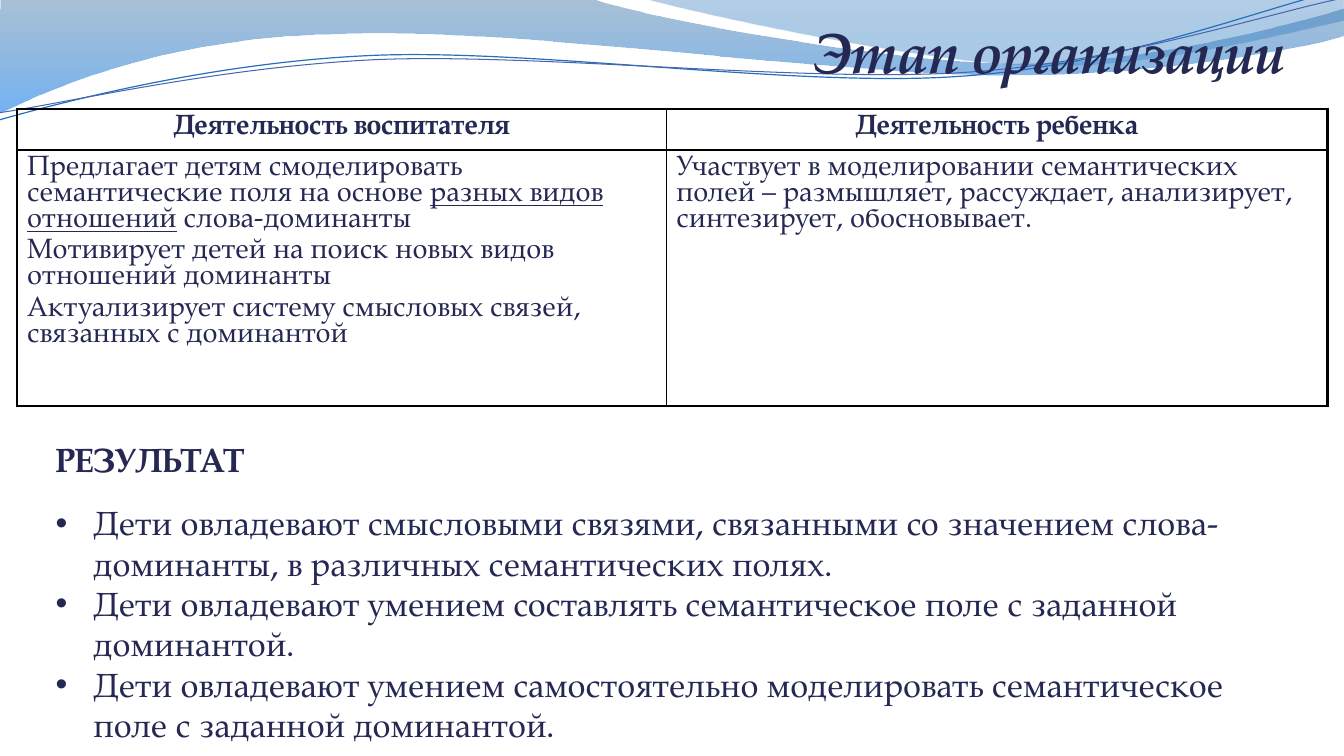
from dataclasses import dataclass

from lxml.etree import SubElement
from pptx import Presentation
from pptx.dml.color import RGBColor
from pptx.enum.text import MSO_ANCHOR, PP_ALIGN
from pptx.oxml import parse_xml
from pptx.oxml.ns import nsdecls, qn
from pptx.util import Pt


@dataclass(frozen=True)
class Theme:
    font: str = "TeX Gyre Pagella"
    ink: str = "242852"
    border: str = "000000"
    title_size: int = 40
    table_size: int = 20
    result_size: int = 24
    thick: float = 2.25
    thin: float = 1


@dataclass(frozen=True)
class Box:
    left: float
    top: float
    width: float
    height: float

    def lengths(self):
        return Pt(self.left), Pt(self.top), Pt(self.width), Pt(self.height)


THEME = Theme()
STRAND_ROTATION = 357.3
HEADING_HEIGHT = 26.6
FIRST_COLUMN_WIDTH = 463.7

BANDS = [
    ([(0, 0), (422.6, -0.7), (456.5, 12.2, 636.5, 45.4, 727.9, 45.4),
      (818.6, 45.4, 919.4, 18.7, 959.8, 6.5), (960.5, 25.9),
      (944, 31.7, 834.5, 54.7, 715.7, 54), (596.9, 54, 366.5, 20.2, 247, 24.5),
      (123.8, 25.9, 43.9, 59.8, -1.4, 81.4)],
     [(0, "4075A3", 45), (1, "0073E7", 55)]),
    ([(459.4, -0.7), (488.9, 7.9, 654.5, 44.6, 738, 46.8),
      (820.8, 49.7, 923, 23, 959.8, 15.1), (959.8, 0)],
     [(0, "0B5EB1", 30), (0.8, "438CCC", 45)]),
]
STRANDS = [
    ([(-2.3, 63.1), (44.4, 52.3, 151.4, 29.2, 266, 29.6),
      (379.8, 29.9, 567, 66.8, 682.5, 64.3),
      (798.5, 62.6, 901.9, 25.7, 959.4, 15.5)], "2470BC", 0.85),
    ([(-2, 57.9), (43.6, 53.7, 157.2, 32.3, 271.6, 32.7),
      (386.9, 33.8, 572.2, 63.4, 687, 61.6),
      (801.6, 59.8, 904.6, 30, 961.4, 21.2)], "4A66AC", 0.75),
]

HEADINGS = ["Деятельность воспитателя", "Деятельность ребенка"]
ACTIVITIES = [
    ["Предлагает детям смоделировать семантические поля на основе "
     "_разных видов отношений_ слова-доминанты",
     "Мотивирует детей на поиск новых видов отношений доминанты",
     "Актуализирует систему смысловых связей, связанных с доминантой"],
    ["Участвует в моделировании семантических полей – размышляет, "
     "рассуждает, анализирует, синтезирует, обосновывает."],
]
RESULTS = [
    "Дети овладевают смысловыми связями, связанными со значением "
    "слова-доминанты, в различных семантических полях.",
    "Дети овладевают умением составлять семантическое поле с заданной доминантой.",
    "Дети овладевают умением самостоятельно моделировать семантическое "
    "поле с заданной доминантой.",
]


def style_runs(para, size, bold=False, italic=False):
    for span in para.runs:
        span.font.name = THEME.font
        span.font.size = Pt(size)
        span.font.bold = bold
        span.font.italic = italic
        span.font.color.rgb = RGBColor.from_string(THEME.ink)


def next_paragraph(frame, index):
    return frame.add_paragraph() if index else frame.paragraphs[0]


def draw_outline(page, box, outline, closed):
    points = [(Pt(box.left + step[-2]), Pt(box.top + step[-1])) for step in outline]
    builder = page.shapes.build_freeform(*points[0])
    builder.add_line_segments(points[1:], close=closed)
    shape = builder.convert_to_shape()
    shape.shadow.inherit = False
    segments = list(shape.element.spPr.iter(qn("a:lnTo")))
    for segment, step in zip(segments, outline[1:]):
        if len(step) == 2:
            continue
        segment.tag = qn("a:cubicBezTo")
        segment.clear()
        for x, y in zip(step[::2], step[1::2]):
            point = SubElement(segment, qn("a:pt"))
            point.set("x", str(Pt(box.left + x) - shape.left))
            point.set("y", str(Pt(box.top + y) - shape.top))
    return shape


def add_waves(page, box):
    for outline, stops in BANDS:
        band = draw_outline(page, box, outline, True)
        band.line.fill.background()
        band.fill.gradient()
        band.fill.gradient_angle = 270
        for stop, (position, color, _) in zip(band.fill.gradient_stops, stops):
            stop.position = position
            stop.color.rgb = RGBColor.from_string(color)
        colors = band.element.spPr.iter(qn("a:srgbClr"))
        for node, (_, _, opacity) in zip(colors, stops):
            SubElement(node, qn("a:alpha")).set("val", str(opacity * 1000))
    for outline, color, width in STRANDS:
        strand = draw_outline(page, box, outline, False)
        strand.rotation = STRAND_ROTATION
        strand.fill.background()
        strand.line.color.rgb = RGBColor.from_string(color)
        strand.line.width = Pt(width)


def add_title(page, box):
    frame = page.shapes.add_textbox(*box.lengths()).text_frame
    frame.word_wrap = True
    frame.vertical_anchor = MSO_ANCHOR.BOTTOM
    frame.margin_left = frame.margin_right = frame.margin_bottom = 0
    para = frame.paragraphs[0]
    para.text = "Этап организации "
    para.alignment = PP_ALIGN.RIGHT
    style_runs(para, THEME.title_size, bold=True, italic=True)


def set_borders(cell, widths):
    properties = cell._tc.get_or_add_tcPr()
    for index, (side, width) in enumerate(widths.items()):
        properties.insert(index, parse_xml(
            f'<a:ln{side} {nsdecls("a")} w="{Pt(width)}"><a:solidFill>'
            f'<a:srgbClr val="{THEME.border}"/></a:solidFill></a:ln{side}>'))


def fill_cell(cell, texts, heading):
    frame = cell.text_frame
    for index, text in enumerate(texts):
        para = next_paragraph(frame, index)
        para.line_spacing = 0.92
        para.space_before = Pt(4 if index else 0)
        para.alignment = PP_ALIGN.CENTER if heading else PP_ALIGN.LEFT
        for part, words in enumerate(text.split("_")):
            span = para.add_run()
            span.text = words
            span.font.underline = part % 2 == 1
        style_runs(para, THEME.table_size, bold=heading)


def add_activity_table(page, box):
    table = page.shapes.add_table(2, 2, *box.lengths()).table
    table.first_row = table.horz_banding = False
    widths = FIRST_COLUMN_WIDTH, box.width - FIRST_COLUMN_WIDTH
    for column, width in zip(table.columns, widths):
        column.width = Pt(width)
    heights = HEADING_HEIGHT, box.height - HEADING_HEIGHT
    for row, height in zip(table.rows, heights):
        row.height = Pt(height)
    rows = [[[heading] for heading in HEADINGS], ACTIVITIES]
    for row, contents in enumerate(rows):
        for column, texts in enumerate(contents):
            cell = table.cell(row, column)
            cell.fill.background()
            fill_cell(cell, texts, heading=row == 0)
            outer = {"L": column == 0, "R": column == 1, "T": row == 0, "B": row == 1}
            set_borders(cell, {side: THEME.thick if edge else THEME.thin
                               for side, edge in outer.items()})


def add_results(page, box):
    frame = page.shapes.add_textbox(*box.lengths()).text_frame
    frame.word_wrap = True
    for index, text in enumerate(["РЕЗУЛЬТАТ"] + RESULTS):
        para = next_paragraph(frame, index)
        para.text = text
        style_runs(para, THEME.result_size, bold=index == 0)
        if index == 0:
            para.space_after = Pt(16.5)
            continue
        properties = para._p.get_or_add_pPr()
        properties.set("marL", str(Pt(27)))
        properties.set("indent", str(Pt(-27)))
        SubElement(properties, qn("a:buFont")).set("typeface", "Arial")
        SubElement(properties, qn("a:buChar")).set("char", "•")


def main():
    deck = Presentation()
    deck.slide_width, deck.slide_height = Pt(960), Pt(540)
    page = deck.slides.add_slide(deck.slide_layouts[6])
    add_waves(page, Box(0, 0, 960, 86))
    add_title(page, Box(227.5, 23.8, 700, 36.7))
    add_activity_table(page, Box(12.2, 77.8, 936, 209.5))
    add_results(page, Box(32.7, 310, 895, 230))
    deck.save("out.pptx")


if __name__ == "__main__":
    main()
